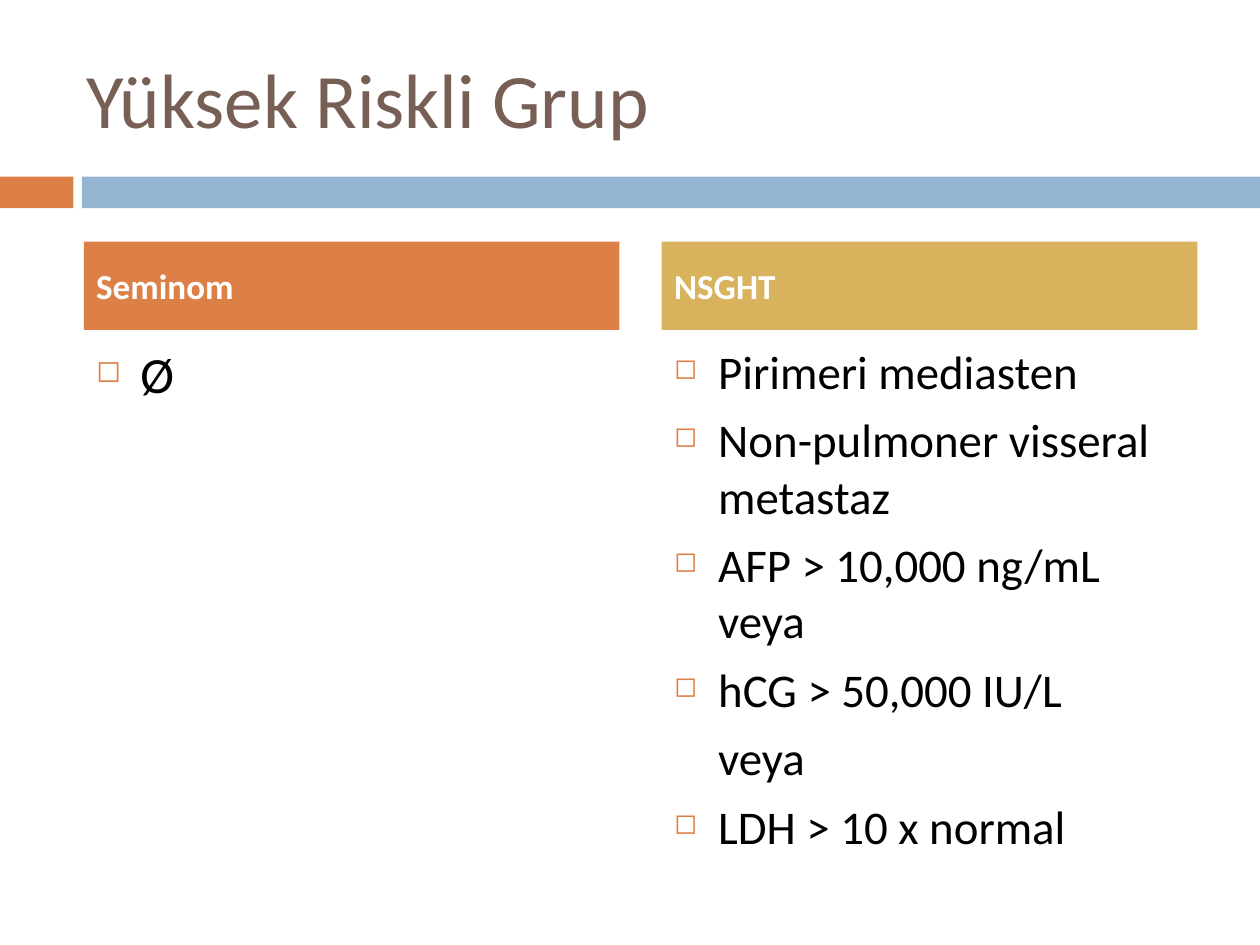
from dataclasses import dataclass

from lxml import etree
from pptx import Presentation
from pptx import util as u
from pptx.dml import color
from pptx.enum import shapes, text
from pptx.oxml import ns

FONT = "Calibri"
ORANGE, BLUE, GOLD = "DD8047", "94B6D2", "D8B25C"
BROWN, WHITE, BLACK = "775F55", "FFFFFF", "000000"
WIDTH, HEIGHT = 25.4, 19.05
BAND_TOP, BAND_HIGH = 3.56, 0.64
COL_WIDE, HEAD_TOP, HEAD_HIGH = 10.8, 4.87, 1.78
LIST_TOP, LIST_HIGH = 6.78, 9.96
INDENT = 0.89


@dataclass
class Item:
    words: str
    mark: bool = True


@dataclass
class Column:
    left: float
    head: str
    fill: str
    size: float
    items: list[Item]


COLUMNS = [
    Column(1.69, "Seminom", ORANGE, 29, [Item("Ø")]),
    Column(13.34, "NSGHT", GOLD, 26.8, [
        Item("Pirimeri mediasten"),
        Item("Non-pulmoner visseral metastaz"),
        Item("AFP > 10,000 ng/mL veya"),
        Item("hCG > 50,000 IU/L"),
        Item("veya", mark=False),
        Item("LDH > 10 x normal"),
    ]),
]


def rgb(code: str) -> color.RGBColor:
    return color.RGBColor.from_string(code)


def write(para, words: str, size: float, tint: str,
          bold: bool = False, space: float = 0) -> None:
    para.alignment = text.PP_ALIGN.LEFT
    para.space_before = u.Pt(space)
    run = para.add_run()
    run.text = words
    font = run.font
    font.name, font.size, font.bold = FONT, u.Pt(size), bold
    font.color.rgb = rgb(tint)


def bullet(para, mark: bool) -> None:
    props = para._p.get_or_add_pPr()
    props.set("marL", str(u.Cm(INDENT)))
    props.set("indent", str(u.Cm(-INDENT if mark else 0)))
    if not mark:
        etree.SubElement(props, ns.qn("a:buNone"))
        return
    tint = etree.SubElement(props, ns.qn("a:buClr"))
    etree.SubElement(tint, ns.qn("a:srgbClr"), val=ORANGE)
    etree.SubElement(props, ns.qn("a:buSzPct"), val="60000")
    etree.SubElement(props, ns.qn("a:buChar"), char="◻")


def block(slide, left: float, top: float, wide: float, high: float, fill: str):
    box = slide.shapes.add_shape(
        shapes.MSO_SHAPE.RECTANGLE,
        u.Cm(left), u.Cm(top), u.Cm(wide), u.Cm(high))
    box.shadow.inherit = False
    box.fill.solid()
    box.fill.fore_color.rgb = rgb(fill)
    box.line.fill.background()
    return box


def title(slide, words: str) -> None:
    head = slide.shapes.title
    head.left, head.top = u.Cm(1.48), u.Cm(0.76)
    head.width, head.height = u.Cm(22.65), u.Cm(2.41)
    frame = head.text_frame
    frame.vertical_anchor = text.MSO_ANCHOR.MIDDLE
    write(frame.paragraphs[0], words, 44, BROWN)


def column(slide, col: Column) -> None:
    box = slide.shapes.add_textbox(
        u.Cm(col.left), u.Cm(LIST_TOP), u.Cm(COL_WIDE), u.Cm(LIST_HIGH))
    frame = box.text_frame
    frame.word_wrap = True
    for row, item in enumerate(col.items):
        para = frame.add_paragraph() if row else frame.paragraphs[0]
        write(para, item.words, col.size, BLACK, space=7)
        bullet(para, item.mark)
    head = block(slide, col.left, HEAD_TOP, COL_WIDE, HEAD_HIGH, col.fill)
    head.text_frame.vertical_anchor = text.MSO_ANCHOR.MIDDLE
    write(head.text_frame.paragraphs[0], col.head, 20, WHITE,
          bold=True, space=7)


def main() -> None:
    deck = Presentation()
    deck.slide_width, deck.slide_height = u.Cm(WIDTH), u.Cm(HEIGHT)
    slide = deck.slides.add_slide(deck.slide_layouts[5])
    block(slide, 0, BAND_TOP, 1.48, BAND_HIGH, ORANGE)
    block(slide, 1.65, BAND_TOP, WIDTH - 1.65, BAND_HIGH, BLUE)
    title(slide, "Yüksek Riskli Grup")
    for col in COLUMNS:
        column(slide, col)
    deck.save("out.pptx")


if __name__ == "__main__":
    main()
